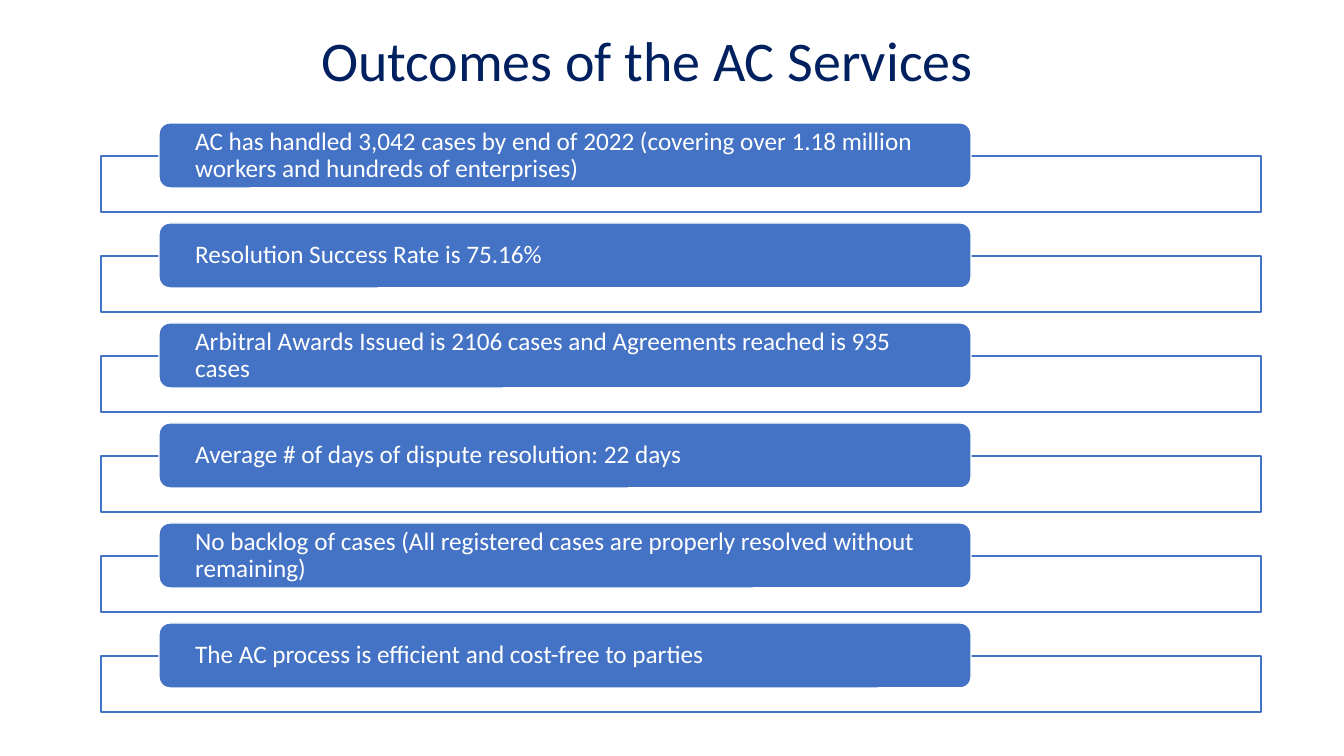
from dataclasses import dataclass

from lxml.etree import SubElement
from pptx import Presentation
from pptx.dml.color import RGBColor
from pptx.enum.shapes import MSO_SHAPE as Shape
from pptx.enum.text import MSO_ANCHOR as Anchor, MSO_AUTO_SIZE as AutoSize, PP_ALIGN as Align
from pptx.oxml.ns import qn
from pptx.util import Emu, Pt

EMU_PER_PX = 914400 / 100.8
FONT = "Calibri"
COLORS = {"title": "002060", "blue": "4472C4", "white": "FFFFFF"}
ROW_PITCH = 100
FRAME_OPACITY = 90


@dataclass(frozen=True)
class Box:
    left: int
    top: int
    width: int
    height: int

    def down(self, px: int) -> "Box":
        return Box(self.left, self.top + px, self.width, self.height)

    def emu(self) -> list[Emu]:
        return [px(n) for n in (self.left, self.top, self.width, self.height)]


TITLE = Box(311, 21, 739, 84)
FRAME = Box(101, 156, 1160, 56)
PILL = Box(159, 123, 812, 65)

OUTCOMES = [
    "AC has handled 3,042 cases by end of 2022 (covering over 1.18 million workers and hundreds of enterprises)",
    "Resolution Success Rate is 75.16%",
    "Arbitral Awards Issued is 2106 cases and Agreements reached is 935 cases",
    "Average # of days of dispute resolution: 22 days",
    "No backlog of cases (All registered cases are properly resolved without remaining)",
    "The AC process is efficient and cost-free to parties",
]


def px(n: int) -> Emu:
    return Emu(round(n * EMU_PER_PX))


def color(name: str) -> RGBColor:
    return RGBColor.from_string(COLORS[name])


def write(tf, text: str, size: int, color_name: str):
    """Fill a frame with one left-aligned paragraph, centred vertically."""
    tf.word_wrap = True
    tf.auto_size = AutoSize.NONE
    tf.vertical_anchor = Anchor.MIDDLE
    p = tf.paragraphs[0]
    p.alignment = Align.LEFT
    p.line_spacing = 0.9
    r = p.add_run()
    r.text = text
    r.font.name = FONT
    r.font.size = Pt(size)
    r.font.color.rgb = color(color_name)
    return p


def add_box(s, kind: Shape, box: Box, fill: str, line: str):
    sp = s.shapes.add_shape(kind, *box.emu())
    sp.shadow.inherit = False
    sp.fill.solid()
    sp.fill.fore_color.rgb = color(fill)
    sp.line.color.rgb = color(line)
    sp.line.width = Pt(1)
    return sp


def add_outcome(s, row: int, text: str) -> None:
    offset = row * ROW_PITCH
    frame = add_box(s, Shape.RECTANGLE, FRAME.down(offset), "white", "blue")
    fill_color = frame.fill._xPr.find(qn("a:solidFill"))[0]
    SubElement(fill_color, qn("a:alpha"), val=str(FRAME_OPACITY * 1000))

    pill = add_box(s, Shape.ROUNDED_RECTANGLE, PILL.down(offset), "blue", "white")
    tf = pill.text_frame
    tf.margin_left = tf.margin_right = px(33)
    tf.margin_top = tf.margin_bottom = 0
    write(tf, text, 18, "white")


def add_title(s, text: str) -> None:
    sp = s.shapes.title
    sp.left, sp.top, sp.width, sp.height = TITLE.emu()
    p = write(sp.text_frame, text, 40, "title")
    p.space_before = p.space_after = Pt(12)


def main() -> None:
    prs = Presentation()
    prs.slide_width, prs.slide_height = px(1344), px(756)
    s = prs.slides.add_slide(prs.slide_layouts[5])
    add_title(s, "Outcomes of the AC Services")
    for row, text in enumerate(OUTCOMES):
        add_outcome(s, row, text)
    prs.save("out.pptx")


if __name__ == "__main__":
    main()
